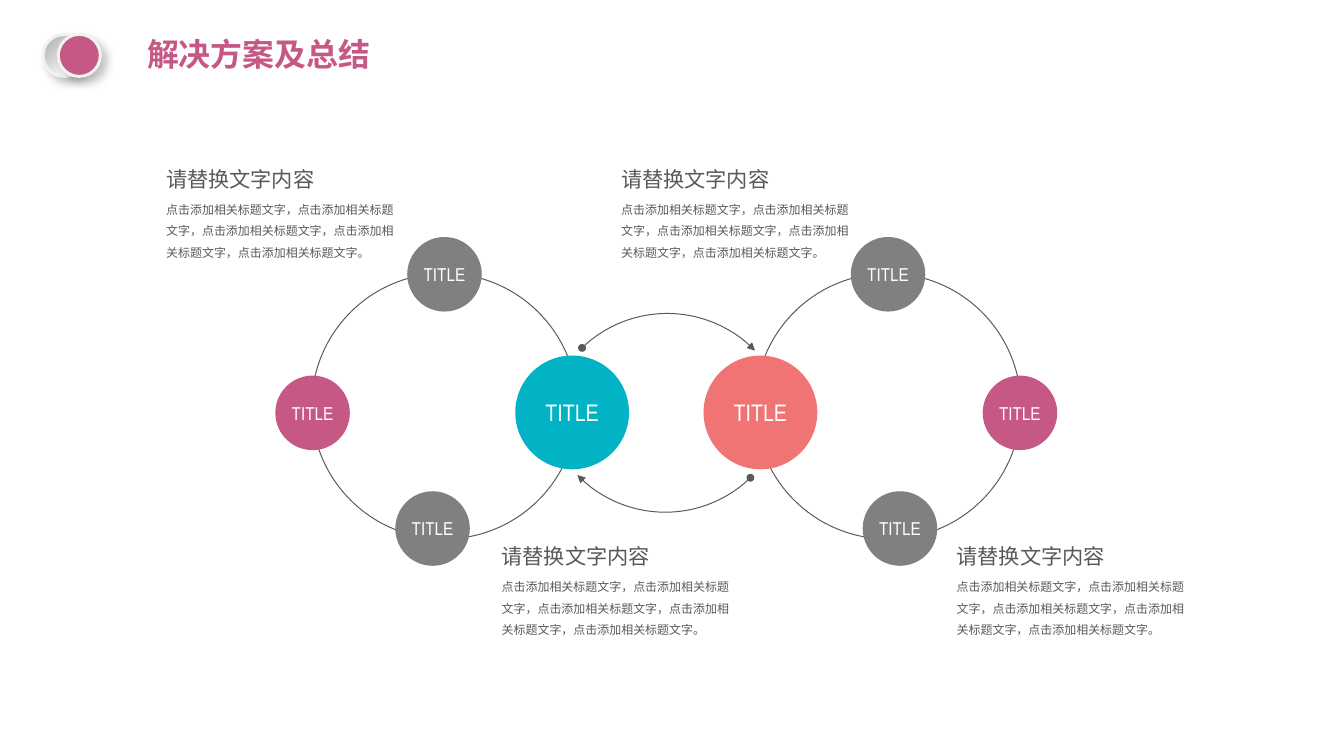
from lxml import etree
from pptx import Presentation, util as u
from pptx.dml.color import RGBColor
from pptx.enum import shapes, text
from pptx.oxml import ns

WIDTH, HEIGHT = 14.06, 7.91
FONT = "Arial Narrow"
COLORS = {"pink": "C65885", "teal": "01B3C5", "coral": "F17475", "gray": "808080",
          "ink": "595959", "white": "FFFFFF", "silver": "BFBFBF", "rim": "F2F2F2",
          "black": "000000"}

TITLE = "解决方案及总结"
HEADING = "请替换文字内容"
BODY = "点击添加相关标题文字，" * 4 + "点击添加相关标题文字。"
NODE_LABEL = "TITLE"

AXIS, RING_Y = 6.97, 4.25
RING_OFFSET, RING_SIZE = 2.32, 2.78
NODES = [
    (0.985, 4.315, 1.19, 18, ("teal", "coral")),
    (3.7, 4.32, 0.78, 14, ("pink", "pink")),
    (2.32, 2.87, 0.78, 14, ("gray", "gray")),
    (2.445, 5.53, 0.78, 14, ("gray", "gray")),
]
ARCS = [(6.98, 4.56, 225.9), (6.96, 4.08, 45.9)]
ARC_SIZE = 2.56
CAPTION_LEFT, CAPTION_TOP = 1.64, 1.69
COLUMN_STEP, ROW_STEP, ROW_SHIFT = 4.76, 3.95, 3.51
BODY_DROP = 0.3
BADGE_LEFTS, BADGE_TOP, BADGE_SIZE = (0.45, 0.61), 0.36, 0.44


def rgb(name):
    return RGBColor.from_string(COLORS[name])


def add_element(parent, tag, **attributes):
    return etree.SubElement(parent, ns.qn(tag), **attributes)


def write(frame, content, size=9, color="ink", bold=False, align=text.PP_ALIGN.LEFT,
          spacing=1.0, wrap=True):
    frame.word_wrap = wrap
    paragraph = frame.paragraphs[0]
    paragraph.alignment = align
    paragraph.line_spacing = spacing
    run = paragraph.add_run()
    run.text = content
    run.font.name = FONT
    run.font.size = u.Pt(size)
    run.font.bold = bold
    run.font.color.rgb = rgb(color)
    add_element(run.font._element, "a:ea", typeface=FONT)


def add_round(slide, center_x, center_y, size, fill=None, line=None, weight=0.75,
              kind=shapes.MSO_SHAPE.OVAL):
    shape = slide.shapes.add_shape(
        kind, u.Inches(center_x - size / 2), u.Inches(center_y - size / 2),
        u.Inches(size), u.Inches(size))
    shape.shadow.inherit = False
    if fill:
        shape.fill.solid()
        shape.fill.fore_color.rgb = rgb(fill)
    else:
        shape.fill.background()
    if line:
        shape.line.color.rgb = rgb(line)
        shape.line.width = u.Pt(weight)
    else:
        shape.line.fill.background()
    return shape


def add_node(slide, center_x, center_y, size, font_size, fill):
    frame = add_round(slide, center_x, center_y, size, fill).text_frame
    frame.margin_left = frame.margin_right = frame.margin_top = frame.margin_bottom = 0
    frame.vertical_anchor = text.MSO_ANCHOR.MIDDLE
    write(frame, NODE_LABEL, size=font_size, color="white", align=text.PP_ALIGN.CENTER)


def add_arc(slide, center_x, center_y, start):
    arc = add_round(slide, center_x, center_y, ARC_SIZE, line="ink",
                    kind=shapes.MSO_SHAPE.ARC)
    for index, angle in enumerate((start, start + 90)):
        arc.adjustments[index] = angle * 0.6
    line = arc.line._get_or_add_ln()
    add_element(line, "a:headEnd", type="oval")
    add_element(line, "a:tailEnd", type="triangle")


def add_text(slide, left, top, width, height, content, **style):
    box = slide.shapes.add_textbox(*map(u.Inches, (left, top, width, height)))
    write(box.text_frame, content, **style)


def add_badge(slide):
    for left in BADGE_LEFTS:
        disc = add_round(slide, left + BADGE_SIZE / 2, BADGE_TOP + BADGE_SIZE / 2,
                         BADGE_SIZE, "pink", "rim", 2.25)
        effects = disc._element.spPr.find(ns.qn("a:effectLst"))
        shadow = add_element(effects, "a:outerShdw", blurRad=str(u.Pt(7)),
                             dist=str(u.Pt(5.9)), dir="2700000", algn="tl",
                             rotWithShape="0")
        tint = add_element(shadow, "a:srgbClr", val=COLORS["black"])
        add_element(tint, "a:alpha", val="23000")
        if left == BADGE_LEFTS[0]:
            disc.fill.gradient()
            disc.fill.gradient_angle = 315
            stops = zip(disc.fill.gradient_stops, (0.2, 0.8), ("silver", "white"))
            for stop, position, color in stops:
                stop.position = position
                stop.color.rgb = rgb(color)


def main():
    presentation = Presentation()
    presentation.slide_width = u.Inches(WIDTH)
    presentation.slide_height = u.Inches(HEIGHT)
    slide = presentation.slides.add_slide(presentation.slide_layouts[6])

    add_badge(slide)
    for side, direction in enumerate((-1, 1)):
        add_round(slide, AXIS + direction * RING_OFFSET, RING_Y, RING_SIZE, line="ink")
        for offset, center_y, size, font_size, fills in NODES:
            add_node(slide, AXIS + direction * offset, center_y, size, font_size,
                     fills[side])
    for arc in ARCS:
        add_arc(slide, *arc)

    for row in range(2):
        for column in range(2):
            left = CAPTION_LEFT + column * COLUMN_STEP + row * ROW_SHIFT
            top = CAPTION_TOP + row * ROW_STEP
            add_text(slide, left, top + BODY_DROP, 2.58, 0.78, BODY, spacing=1.5)
            add_text(slide, left, top, 1.77, 0.37, HEADING, size=16, wrap=False)
    add_text(slide, 1.44, 0.36, 3.62, 0.55, TITLE, size=24, color="pink", bold=True,
             spacing=0.9)

    presentation.save("out.pptx")


if __name__ == "__main__":
    main()
